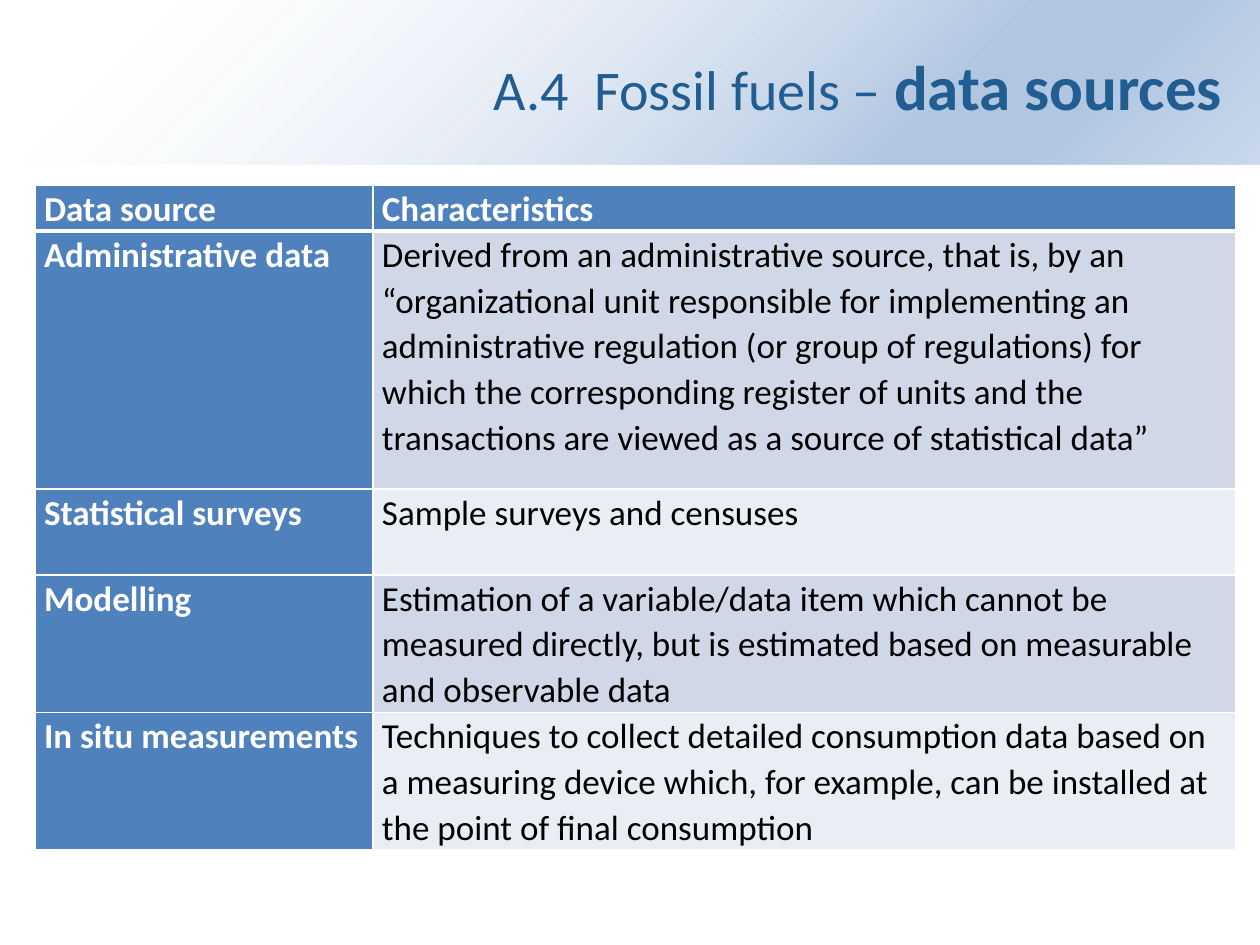
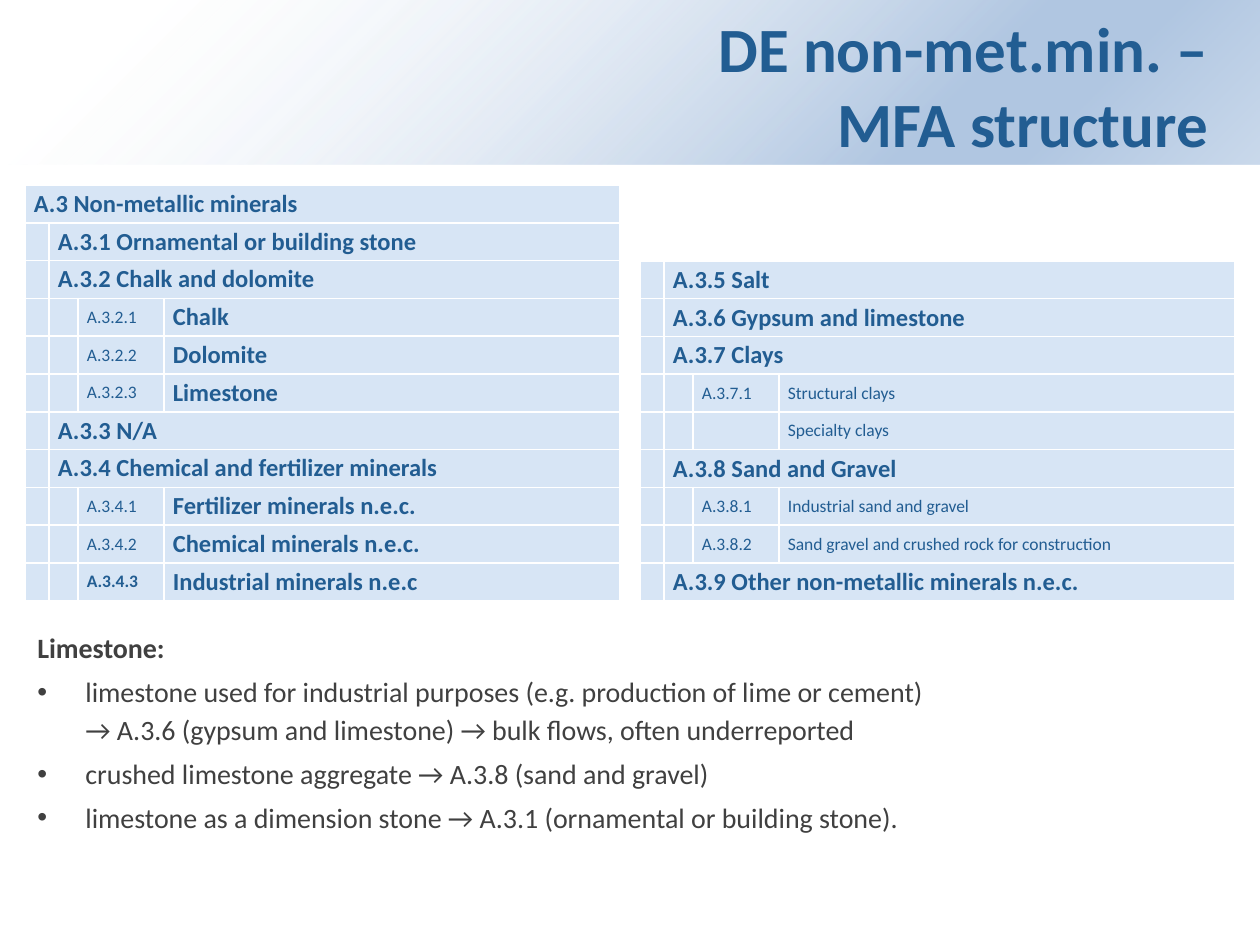
from lxml.etree import SubElement
from pptx import Presentation
from pptx.dml.color import RGBColor
from pptx.enum.shapes import MSO_SHAPE as Shape
from pptx.enum.text import MSO_ANCHOR as Anchor, MSO_AUTO_SIZE as AutoSize, PP_ALIGN as Align
from pptx.oxml.ns import qn
from pptx.util import Pt

EMU_PER_PX = 914400 / 126
FONT = "Calibri"
TITLE_BLUE, HEADER_BLUE, MINERAL_FILL = "225D92", "4F81BD", "D7E5F5"
WHITE, BLACK, BODY_GREY = "FFFFFF", "000000", "404040"
STRIPES = ["D0D8E8", "E9EDF4"]
BAND_STOPS = [(11, WHITE, 30), (74, "B0C6E1", 100), (83, "B0C6E1", 100), (100, "CAD9EB", 100)]

SOURCES = [
    ("Administrative data",
     "Derived from an administrative source, that is, by an “organizational unit responsible "
     "for implementing an administrative regulation (or group of regulations) for which the "
     "corresponding register of units and the transactions are viewed as a source of "
     "statistical data”"),
    ("Statistical surveys", "Sample surveys and censuses"),
    ("Modelling",
     "Estimation of a variable/data item which cannot be measured directly, but is estimated "
     "based on measurable and observable data"),
    ("In situ measurements",
     "Techniques to collect detailed consumption data based on a measuring device which, for "
     "example, can be installed at the point of final consumption"),
]
SOURCE_ROWS = [43, 258, 86, 129, 129]

MINERAL_COLUMNS = [24, 29, 86, 456]
MINERALS_LEFT = [
    (0, "A.3 Non-metallic minerals"),
    (1, "A.3.1 Ornamental or building stone"),
    (1, "A.3.2 Chalk and dolomite"),
    (2, "A.3.2.1", "Chalk"),
    (2, "A.3.2.2", "Dolomite"),
    (2, "A.3.2.3", "Limestone"),
    (1, "A.3.3 N/A"),
    (1, "A.3.4 Chemical and fertilizer minerals"),
    (2, "A.3.4.1", "Fertilizer minerals n.e.c."),
    (2, "A.3.4.2", "Chemical minerals n.e.c."),
    (2, "A.3.4.3", "Industrial minerals n.e.c"),
]
MINERALS_RIGHT = [
    (1, "A.3.5 Salt"),
    (1, "A.3.6 Gypsum and limestone"),
    (1, "A.3.7 Clays"),
    (2, "A.3.7.1", "Structural clays"),
    (2, "", "Specialty clays"),
    (1, "A.3.8 Sand and Gravel"),
    (2, "A.3.8.1", "Industrial sand and gravel"),
    (2, "A.3.8.2", "Sand gravel and crushed rock for construction"),
    (1, "A.3.9 Other non-metallic minerals n.e.c."),
]
BOLD_CODES = {"A.3.4.3"}

LIMESTONE_USES = [
    "limestone used for industrial purposes (e.g. production of lime or cement) \v"
    "→ A.3.6 (gypsum and limestone) → bulk flows, often underreported",
    "crushed limestone aggregate → A.3.8 (sand and gravel)",
    "limestone as a dimension stone → A.3.1 (ornamental or building stone).",
]


def px(length):
    """Turn pixels into EMU."""
    return round(length * EMU_PER_PX)


def rgb(value):
    """Turn a hex string into a colour."""
    return RGBColor.from_string(value)


def set_font(font, size, color, bold=False):
    """Set typeface, size, colour and weight."""
    font.name, font.size, font.bold = FONT, Pt(size), bold
    font.color.rgb = rgb(color)


def add_band(slide):
    """Lay the diagonal gradient band behind the title."""
    band = slide.shapes.add_shape(Shape.RECTANGLE, 0, 0, px(1260), px(165))
    band.shadow.inherit = False
    band.line.fill.background()
    properties = band._element.spPr
    gradient = SubElement(properties, qn("a:gradFill"), rotWithShape="1")
    properties.insert(2, gradient)
    stops = SubElement(gradient, qn("a:gsLst"))
    for position, color, opacity in BAND_STOPS:
        stop = SubElement(stops, qn("a:gs"), pos=str(position * 1000))
        tint = SubElement(stop, qn("a:srgbClr"), val=color)
        if opacity < 100:
            SubElement(tint, qn("a:alpha"), val=str(opacity * 1000))
    SubElement(gradient, qn("a:lin"), ang="2700000", scaled="0")
    slide.shapes._spTree.insert(2, band._element)


def add_titled_slide(prs, title_parts):
    """Add a slide with the band and a title of (text, size, bold) parts."""
    slide = prs.slides.add_slide(prs.slide_layouts[5])
    add_band(slide)
    title = slide.shapes.title
    title.left, title.top, title.width, title.height = px(382), px(6), px(853), px(158)
    frame = title.text_frame
    frame.auto_size, frame.vertical_anchor = AutoSize.NONE, Anchor.MIDDLE
    heading = frame.paragraphs[0]
    heading.alignment = Align.RIGHT
    for text, size, bold in title_parts:
        for index, line in enumerate(text.split("\v")):
            if index:
                heading.add_line_break()
            run = heading.add_run()
            run.text = line
            set_font(run.font, size, TITLE_BLUE, bold)
    return slide


def add_grid(slide, left, top, columns, rows):
    """Add an unstyled table from EMU column widths and row heights."""
    frame = slide.shapes.add_table(len(rows), len(columns), px(left), px(top),
                                   sum(columns), sum(rows))
    grid = frame.table
    grid.first_row = grid.horz_banding = False
    for column, width in zip(grid.columns, columns):
        column.width = width
    for row, height in zip(grid.rows, rows):
        row.height = height
    return grid


def fill_cell(cell, text, fill, size, color, bold, anchor, bottom=1, spacing=1.0):
    """Write, colour and border one table cell."""
    cell.margin_left = cell.margin_right = px(9)
    cell.margin_top = cell.margin_bottom = 0
    cell.vertical_anchor = anchor
    for side in "LRTB":
        width = Pt(bottom if side == "B" else 1)
        border = SubElement(cell._tc.tcPr, qn(f"a:ln{side}"), w=str(width))
        SubElement(SubElement(border, qn("a:solidFill")), qn("a:srgbClr"), val=WHITE)
    cell.fill.solid()
    cell.fill.fore_color.rgb = rgb(fill)
    paragraph = cell.text_frame.paragraphs[0]
    paragraph.text = text
    paragraph.line_spacing = spacing
    set_font(paragraph.font, size, color, bold)


def add_source_table(slide):
    """Add the table of data sources and their characteristics."""
    grid = add_grid(slide, 35, 185, [px(338), px(863)], [px(row) for row in SOURCE_ROWS])
    for r, texts in enumerate([("Data source", "Characteristics"), *SOURCES]):
        for c, text in enumerate(texts):
            heading = r == 0 or c == 0
            fill_cell(grid.cell(r, c), text,
                      HEADER_BLUE if heading else STRIPES[(r - 1) % 2], 20,
                      WHITE if heading else BLACK, heading, Anchor.TOP,
                      bottom=1 if r else 3, spacing=1.07)


def add_mineral_table(slide, left, top, height, minerals, name_size, name_bold):
    """Add a classification table indented by level."""
    row_height = px(height) // len(minerals)
    grid = add_grid(slide, left, top, [px(width) for width in MINERAL_COLUMNS],
                    [row_height] * len(minerals))
    last = len(MINERAL_COLUMNS) - 1
    for r, (level, label, *names) in enumerate(minerals):
        styled = {level: (label, 14, True)}
        if names:
            styled = {level: (label, 10, label in BOLD_CODES),
                      last: (names[0], name_size, name_bold)}
        for c in range(last + 1):
            text, size, bold = styled.get(c, ("", 10, False))
            fill_cell(grid.cell(r, c), text, MINERAL_FILL, size, TITLE_BLUE, bold, Anchor.MIDDLE)
        if not names:
            grid.cell(r, level).merge(grid.cell(r, last))


def add_bullet(paragraph):
    """Give a paragraph a hanging bullet."""
    properties = paragraph._p.get_or_add_pPr()
    properties.set("marL", str(px(48)))
    properties.set("indent", str(-px(48)))
    SubElement(properties, qn("a:buFont"), typeface="Arial")
    SubElement(properties, qn("a:buChar"), char="•")


def add_notes_on_limestone(slide):
    """Add the limestone heading and its bulleted uses."""
    frame = slide.shapes.add_textbox(px(25), px(620), px(1211), px(309)).text_frame
    frame.word_wrap = True
    for index, text in enumerate(["Limestone:", *LIMESTONE_USES]):
        paragraph = frame.add_paragraph() if index else frame.paragraphs[0]
        paragraph.text = text
        paragraph.line_spacing = 1.14
        if index:
            paragraph.space_before = Pt(3.2)
            add_bullet(paragraph)
        set_font(paragraph.font, 16, BODY_GREY, index == 0)


def main():
    """Build both slides and save them."""
    prs = Presentation()
    prs.slide_width, prs.slide_height = px(1260), px(945)

    fossil_fuels = add_titled_slide(
        prs, [("A.4  Fossil fuels – ", 32, False), ("data sources", 36, True)])
    add_source_table(fossil_fuels)

    structure = add_titled_slide(prs, [("DE non-met.min. – \vMFA structure ", 36, True)])
    add_notes_on_limestone(structure)
    add_mineral_table(structure, 25, 185, 416, MINERALS_LEFT, 14, True)
    add_mineral_table(structure, 640, 261, 340, MINERALS_RIGHT, 10, False)

    prs.save("out.pptx")


if __name__ == "__main__":
    main()
